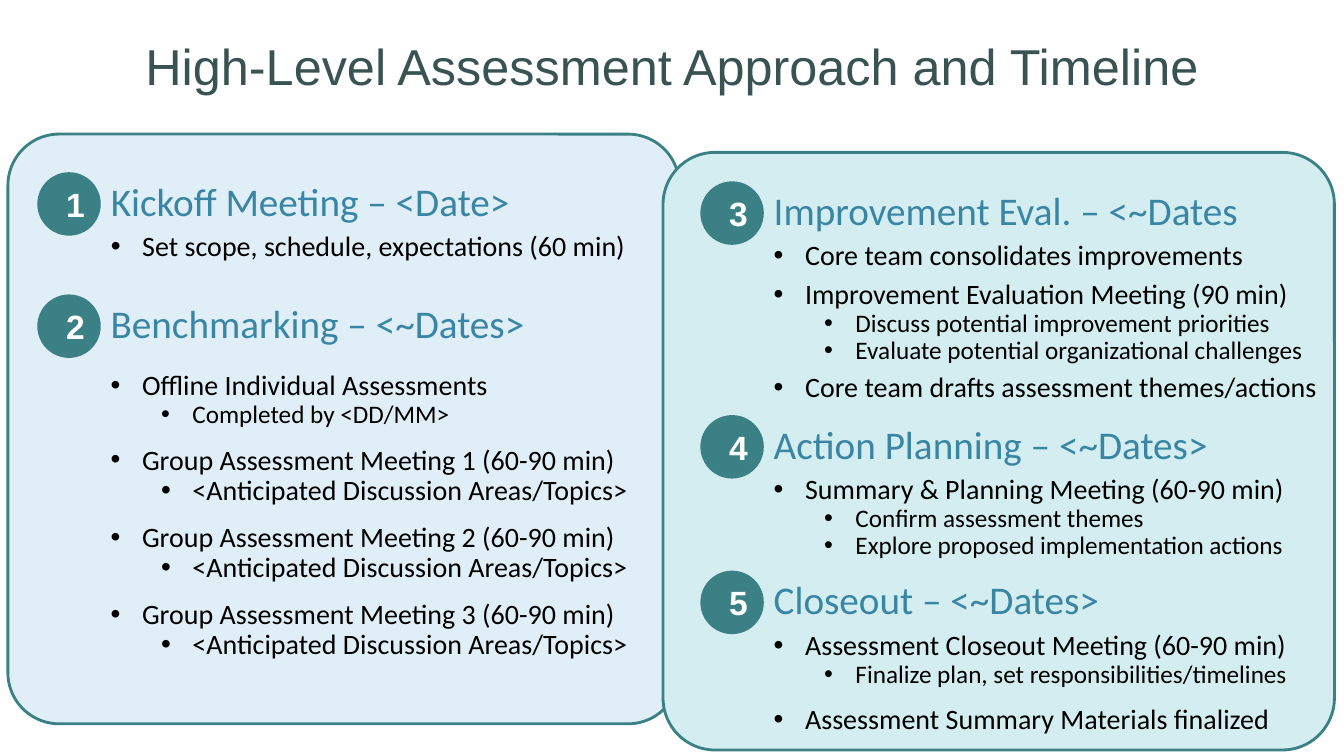
from pptx import Presentation
from pptx.dml.color import RGBColor
from pptx.enum.shapes import MSO_SHAPE as Shape
from pptx.enum.text import MSO_ANCHOR as Anchor, MSO_AUTO_SIZE as AutoSize, PP_ALIGN as Align
from pptx.oxml.ns import qn
from pptx.util import Cm, Pt
from lxml.etree import SubElement

TITLE = "High-Level Assessment Approach and Timeline"
TEAL, BLUE, BLACK, WHITE, SLATE = "3A8084", "3985A4", "000000", "FFFFFF", "395352"

PANELS = [
    (0.2, 3.38, 14.86, "E0EEF7"),
    (16.71, 3.84, 15.06, "D4EDF0"),
]
PANEL_WIDTH = 16.92
LEFT, RIGHT = 2.54, 19.25
TEXT_WIDTH = 14.4
CIRCLE = 1.6
TOPIC = ("<Anticipated Discussion Areas/Topics>", 1, 20, 0, 0)

# Each item: text, level, size, space before, space after
SECTIONS = [
    (LEFT, 4.34, 3.07, "Kickoff Meeting – <Date>", [
        ("Set scope, schedule, expectations (60 min)", 0, 20, 0, 6),
    ]),
    (LEFT, 7.42, 11.63, "Benchmarking – <~Dates>", [
        ("Offline Individual Assessments", 0, 20, 12, 0),
        ("Completed by <DD/MM>", 1, 18, 0, 0),
        ("Group Assessment Meeting 1 (60-90 min)", 0, 20, 12, 0),
        TOPIC,
        ("Group Assessment Meeting 2 (60-90 min)", 0, 20, 12, 0),
        TOPIC,
        ("Group Assessment Meeting 3 (60-90 min)", 0, 20, 12, 0),
        TOPIC,
    ]),
    (RIGHT, 4.57, 3.07, "Improvement Eval. – <~Dates", [
        ("Core team consolidates improvements", 0, 20, 0, 6),
        ("Improvement Evaluation Meeting (90 min)", 0, 20, 0, 0),
        ("Discuss potential improvement priorities", 1, 18, 0, 0),
        ("Evaluate potential organizational challenges", 1, 18, 0, 0),
        ("Core team drafts assessment themes/actions", 0, 20, 6, 0),
    ]),
    (RIGHT, 10.46, 3.07, "Action Planning – <~Dates>", [
        ("Summary & Planning Meeting (60-90 min)", 0, 20, 0, 0),
        ("Confirm assessment themes", 1, 18, 0, 0),
        ("Explore proposed implementation actions", 1, 18, 0, 0),
    ]),
    (RIGHT, 14.38, 3.07, "Closeout – <~Dates>", [
        ("Assessment Closeout Meeting (60-90 min)", 0, 20, 0, 0),
        ("Finalize plan, set responsibilities/timelines", 1, 18, 0, 0),
        ("Assessment Summary Materials finalized", 0, 20, 12, 0),
    ]),
]


def color(value):
    return RGBColor.from_string(value)


def place(shape, *box):
    shape.left, shape.top, shape.width, shape.height = map(Cm, box)


def set_margins(frame, margin):
    frame.margin_left = frame.margin_right = Cm(margin)
    frame.margin_top = frame.margin_bottom = Cm(margin)


def set_font(paragraph, name, size, value, bold=False):
    font = paragraph.font
    font.name, font.size, font.bold = name, Pt(size), bold
    font.color.rgb = color(value)


def set_spacing(paragraph, line, before, after):
    paragraph.line_spacing = line
    paragraph.space_before, paragraph.space_after = Pt(before), Pt(after)


def set_bullet(paragraph, indent, hanging, bullet=None):
    properties = paragraph._p.get_or_add_pPr()
    properties.set("marL", str(Cm(indent)))
    properties.set("indent", str(-Cm(hanging)))
    if bullet:
        SubElement(properties, qn("a:buFont"), typeface="Arial")
        SubElement(properties, qn("a:buChar"), char=bullet)
    else:
        SubElement(properties, qn("a:buNone"))


def add_filled(slide, kind, box, fill):
    shape = slide.shapes.add_shape(kind, *map(Cm, box))
    shape.shadow.inherit = False
    shape.fill.solid()
    shape.fill.fore_color.rgb = color(fill)
    return shape


def fill_section(frame, heading, items):
    frame.word_wrap = True
    frame.auto_size = AutoSize.NONE
    paragraph = frame.paragraphs[0]
    paragraph.text = heading
    set_spacing(paragraph, 1.0, 12, 6)
    set_bullet(paragraph, 0, 0)
    set_font(paragraph, "Calibri", 28, BLUE)
    for text, level, size, before, after in items:
        paragraph = frame.add_paragraph()
        paragraph.text = text
        paragraph.level = level
        set_spacing(paragraph, 0.9, before, after)
        set_bullet(paragraph, 0.79 + 1.27 * level, 0.79, "•")
        set_font(paragraph, "Calibri", size, BLACK)


def add_number(slide, number, left, top):
    circle = add_filled(slide, Shape.OVAL, (left - CIRCLE, top, CIRCLE, CIRCLE), TEAL)
    circle.line.fill.background()
    frame = circle.text_frame
    set_margins(frame, 0.64)
    frame.vertical_anchor = Anchor.MIDDLE
    paragraph = frame.paragraphs[0]
    paragraph.text = str(number)
    paragraph.alignment = Align.CENTER
    set_font(paragraph, "Arial", 24, WHITE, True)


def main():
    presentation = Presentation()
    presentation.slide_width, presentation.slide_height = Cm(33.87), Cm(19.05)
    slide = presentation.slides.add_slide(presentation.slide_layouts[1])
    title, body = slide.placeholders

    for left, top, height, fill in PANELS:
        panel = add_filled(slide, Shape.ROUNDED_RECTANGLE, (left, top, PANEL_WIDTH, height), fill)
        panel.adjustments[0] = 0.087
        panel.line.color.rgb = color(TEAL)
        panel.line.width = Pt(2)
        title.element.addprevious(panel.element)

    place(title, 0, 0.38, 33.87, 2.54)
    frame = title.text_frame
    set_margins(frame, 0)
    frame.auto_size = AutoSize.NONE
    frame.vertical_anchor = Anchor.MIDDLE
    paragraph = frame.paragraphs[0]
    paragraph.text = TITLE
    paragraph.alignment = Align.CENTER
    set_font(paragraph, "Arial", 36, SLATE)

    for number, (left, top, height, heading, items) in enumerate(SECTIONS, 1):
        box = (left, top, TEXT_WIDTH, height)
        if number == 1:
            place(body, *box)
            section = body
        else:
            section = slide.shapes.add_textbox(*map(Cm, box))
        fill_section(section.text_frame, heading, items)
        add_number(slide, number, left, top)

    presentation.save("out.pptx")


if __name__ == "__main__":
    main()
